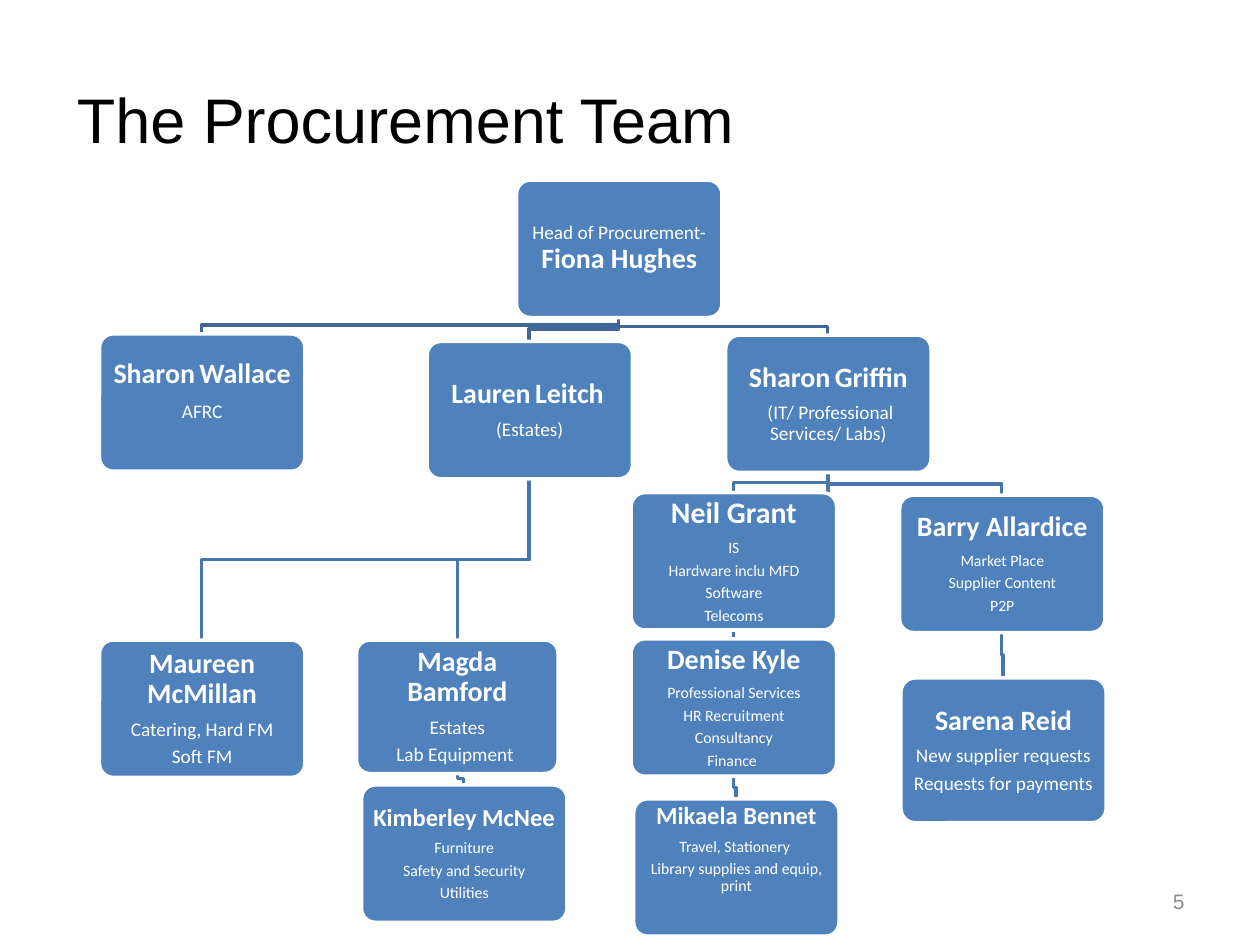
from pptx import Presentation, util as u
from pptx.dml.color import RGBColor
from pptx.enum import shapes, text

PX = 9144
BLUE = RGBColor(0x4F, 0x81, 0xBD)
TOP_LINK = RGBColor(0x3F, 0x67, 0x97)
LOWER_LINK = RGBColor(0x48, 0x75, 0xAC)
WHITE = RGBColor(0xFF, 0xFF, 0xFF)
BLACK = RGBColor(0, 0, 0)
GREY = RGBColor(0x8C, 0x8C, 0x8C)

TITLE = "The Procurement Team"
PAGE_NUMBER = "5"
HEAD = "Fiona Hughes"
HEAD_ROLE = "Head of Procurement- "
BOX_SIZE = (163, 109)

# name: (manager, left, top, name size, detail size, details)
TEAM = {
    HEAD: (None, 410, 143, 16, 11, []),
    "Sharon Wallace": (HEAD, 79, 265, 16, 11, ["AFRC"]),
    "Lauren Leitch": (HEAD, 339, 271, 16, 11, ["(Estates)"]),
    "Sharon Griffin": (HEAD, 576, 266, 16, 11, [" (IT/ Professional Services/ Labs)"]),
    "Maureen McMillan": ("Lauren Leitch", 79, 508, 16, 11, ["Catering, Hard FM", "Soft FM"]),
    "Magda Bamford": ("Lauren Leitch", 283, 508, 16, 11, ["Estates", "Lab Equipment "]),
    "Kimberley McNee": ("Magda Bamford", 287, 623, 14, 9,
                        ["Furniture", "Safety and Security", "Utilities"]),
    "Denise Kyle": ("Sharon Griffin", 501, 507, 16, 9,
                    ["Professional Services", "HR Recruitment", "Consultancy", "Finance "]),
    "Mikaela Bennet": ("Denise Kyle", 503, 634, 14, 9,
                       ["Travel, Stationery ", "Library supplies and equip, print"]),
    "Neil Grant": ("Sharon Griffin", 501, 391, 17, 9,
                   ["IS", "Hardware inclu MFD", "Software", "Telecoms"]),
    "Barry Allardice": ("Sharon Griffin", 714, 393, 16, 9,
                        ["Market Place", "Supplier Content", "P2P"]),
    "Sarena Reid": ("Barry Allardice", 715, 538, 16, 11,
                    ["New supplier requests", "Requests for payments"]),
}
SPECIAL_SIZES = {"Magda Bamford": (160, 106), "Sarena Reid": (163, 115)}
NARROW_GAPS = {"Sharon Wallace", "Lauren Leitch", "Sharon Griffin", "Maureen McMillan"}
SPACE_BELOW = {"Sharon Wallace": 22, "Mikaela Bennet": 29}


def px(*lengths):
    return [u.Emu(length * PX) for length in lengths]


def bounds(name):
    left, top = TEAM[name][1:3]
    return left, top, *SPECIAL_SIZES.get(name, BOX_SIZE)


def add_link(page, manager, name):
    left, top, width, height = bounds(manager)
    start_x, start_y = left + width // 2, top + height
    left, end_y, width, _ = bounds(name)
    end_x = left + width // 2
    middle = (start_y + end_y) // 2
    builder = page.shapes.build_freeform(start_x, start_y, scale=PX)
    builder.add_line_segments([(start_x, middle), (end_x, middle), (end_x, end_y)], close=False)
    link = builder.convert_to_shape()
    link.shadow.inherit = False
    link.fill.background()
    link.line.color.rgb = TOP_LINK if manager == HEAD else LOWER_LINK
    link.line.width = u.Pt(2)


def style(para, size, spacing=0.9):
    para.alignment = text.PP_ALIGN.CENTER
    para.line_spacing = spacing
    para.space_after = u.Pt(round(size * 0.35, 2))
    para.font.name = "Calibri"
    para.font.size = u.Pt(size)
    para.font.color.rgb = WHITE


def add_span(para, words, size, bold):
    span = para.add_run()
    span.text = words
    span.font.size = u.Pt(size)
    span.font.bold = bold
    span.font.name = "Calibri"
    span.font.color.rgb = WHITE


def add_box(page, name):
    _, _, _, name_size, detail_size, details = TEAM[name]
    box = page.shapes.add_shape(shapes.MSO_SHAPE.ROUNDED_RECTANGLE, *px(*bounds(name)))
    box.adjustments[0] = 0.1
    box.shadow.inherit = False
    box.fill.solid()
    box.fill.fore_color.rgb = BLUE
    box.line.color.rgb = WHITE
    box.line.width = u.Pt(2)
    frame = box.text_frame
    frame.word_wrap = True
    frame.vertical_anchor = text.MSO_ANCHOR.MIDDLE
    inset = 5 if name == HEAD else 6 if name_size == 14 else 7
    frame.margin_left, frame.margin_right, frame.margin_top, frame.margin_bottom = px(
        inset, inset, inset, inset + SPACE_BELOW.get(name, 0))
    spacing = 1.0 if name == "Sharon Wallace" else 0.9
    para = frame.paragraphs[0]
    style(para, name_size, spacing)
    if name == HEAD:
        add_span(para, HEAD_ROLE, detail_size, False)
    if name in NARROW_GAPS:
        first, last = name.split()
        add_span(para, first, name_size, True)
        add_span(para, " ", detail_size, False)
        add_span(para, last, name_size, True)
        if name == "Lauren Leitch":
            add_span(para, " ", detail_size, False)
    else:
        add_span(para, name, name_size, True)
    for detail in details:
        para = frame.add_paragraph()
        para.text = detail
        style(para, detail_size, spacing)


def write_line(box, words, size, color, align, anchor):
    frame = box.text_frame
    frame.word_wrap = True
    frame.auto_size = text.MSO_AUTO_SIZE.NONE
    frame.vertical_anchor = anchor
    para = frame.paragraphs[0]
    para.text = words
    para.alignment = align
    para.font.name = "Arial"
    para.font.size = u.Pt(size)
    para.font.color.rgb = color


def main():
    deck = Presentation()
    deck.slide_width, deck.slide_height = px(1000, 750)
    page = deck.slides.add_slide(deck.slide_layouts[5])
    title = page.shapes.title
    title.left, title.top, title.width, title.height = px(51, 0, 898, 129)
    write_line(title, TITLE, 36, BLACK, text.PP_ALIGN.LEFT, text.MSO_ANCHOR.BOTTOM)
    number = page.shapes.add_textbox(*px(717, 695, 233, 40))
    write_line(number, PAGE_NUMBER, 12, GREY, text.PP_ALIGN.RIGHT, text.MSO_ANCHOR.MIDDLE)
    for name, (manager, *_) in TEAM.items():
        if manager:
            add_link(page, manager, name)
    for name in TEAM:
        add_box(page, name)
    deck.save("out.pptx")


if __name__ == "__main__":
    main()
